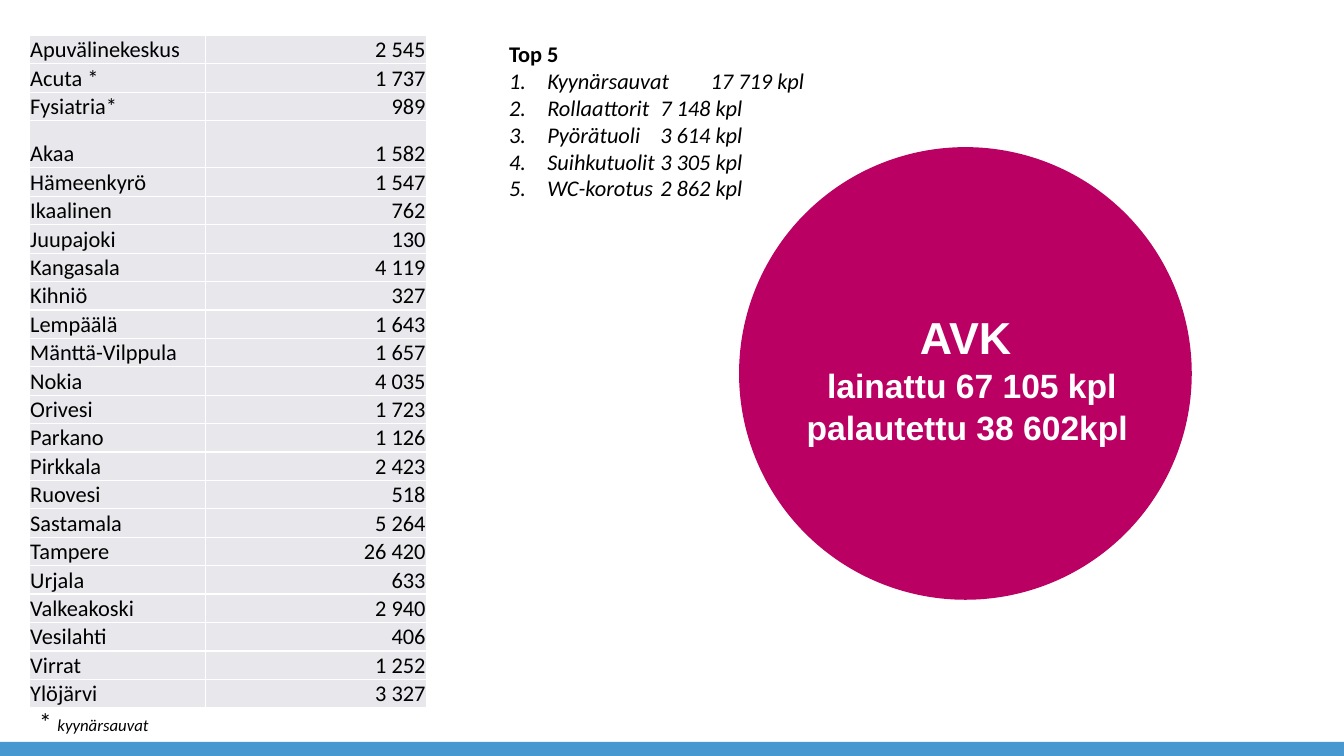
from lxml import etree
from pptx import Presentation
from pptx.dml import color
from pptx.enum import shapes, text
from pptx.oxml import ns
from pptx.util import Inches, Pt

LOANS = [
    ("Apuvälinekeskus", "2 545"), ("Acuta *", "1 737"), ("Fysiatria*", "989"),
    ("Akaa", "1 582"), ("Hämeenkyrö", "1 547"), ("Ikaalinen", "762"),
    ("Juupajoki", "130"), ("Kangasala", "4 119"), ("Kihniö", "327"),
    ("Lempäälä", "1 643"), ("Mänttä-Vilppula", "1 657"), ("Nokia", "4 035"),
    ("Orivesi", "1 723"), ("Parkano", "1 126"), ("Pirkkala", "2 423"),
    ("Ruovesi", "518"), ("Sastamala", "5 264"), ("Tampere", "26 420"),
    ("Urjala", "633"), ("Valkeakoski", "2 940"), ("Vesilahti", "406"),
    ("Virrat", "1 252"), ("Ylöjärvi", "3 327"),
]
TOP_FIVE = [
    ("Kyynärsauvat", "17 719 kpl"), ("Rollaattorit", "7 148 kpl"),
    ("Pyörätuoli", "3 614 kpl"), ("Suihkutuolit", "3 305 kpl"),
    ("WC-korotus", "2 862 kpl"),
]


def rgb(value):
    return color.RGBColor.from_string(value)


def add_run(p, words, size, name="Calibri", hue="000000", bold=False, italic=False):
    r = p.add_run()
    r.text = words
    r.font.size = Pt(size)
    r.font.name = name
    r.font.bold = bold
    r.font.italic = italic
    r.font.color.rgb = rgb(hue)


def add_shape(s, kind, box, fill):
    sp = s.shapes.add_shape(kind, *map(Inches, box))
    sp.shadow.inherit = False
    sp.fill.solid()
    sp.fill.fore_color.rgb = rgb(fill)
    sp.line.fill.background()


def add_text(s, box, anchor=text.MSO_ANCHOR.TOP):
    tf = s.shapes.add_textbox(*map(Inches, box)).text_frame
    tf.word_wrap = True
    tf.vertical_anchor = anchor
    return tf


def number_paragraph(p):
    pPr = p._p.get_or_add_pPr()
    pPr.set("marL", str(Inches(0.38)))
    pPr.set("indent", str(Inches(-0.38)))
    etree.SubElement(pPr, ns.qn("a:buFont"), typeface="+mj-lt")
    etree.SubElement(pPr, ns.qn("a:buAutoNum"), type="arabicPeriod")


def add_borders(cell, hue):
    tcPr = cell._tc.get_or_add_tcPr()
    for side in ("lnL", "lnR", "lnT", "lnB"):
        ln = etree.SubElement(tcPr, ns.qn(f"a:{side}"), w=str(Pt(1)))
        fill = etree.SubElement(ln, ns.qn("a:solidFill"))
        etree.SubElement(fill, ns.qn("a:srgbClr"), val=hue)


def fill_cell(cell, words, align):
    cell.margin_left = cell.margin_right = cell.margin_top = Inches(0.01)
    cell.margin_bottom = 0
    cell.vertical_anchor = text.MSO_ANCHOR.BOTTOM
    add_borders(cell, "FFFFFF")
    cell.fill.solid()
    cell.fill.fore_color.rgb = rgb("E8E8EC")
    p = cell.text_frame.paragraphs[0]
    p.alignment = align
    add_run(p, words, 16)


def add_loan_table(s):
    box = map(Inches, (0.29, 0.35, 3.94, 6.61))
    table = s.shapes.add_table(len(LOANS), 2, *box).table
    table.first_row = table.horz_banding = False
    for column, width in zip(table.columns, (1.75, 2.19)):
        column.width = Inches(width)
    aligns = (text.PP_ALIGN.LEFT, text.PP_ALIGN.RIGHT)
    for i, loan in enumerate(LOANS):
        table.rows[i].height = Inches(0.47 if loan[0] == "Akaa" else 0.28)
        for j, words in enumerate(loan):
            fill_cell(table.cell(i, j), words, aligns[j])


def add_totals(s):
    tf = add_text(s, (7.31, 2.3, 4.66, 2.89), text.MSO_ANCHOR.MIDDLE)
    lines = (("AVK ", 32), ("lainattu 67 105 kpl palautettu 38 602kpl ", 24))
    for i, (words, size) in enumerate(lines):
        p = tf.add_paragraph() if i else tf.paragraphs[0]
        p.alignment = text.PP_ALIGN.CENTER
        p.line_spacing = 1.04
        add_run(p, words, size, "Arial", "FFFFFF", bold=True)


def add_footnote(s):
    p = add_text(s, (0.29, 6.96, 6.77, 0.4)).paragraphs[0]
    add_run(p, "* ", 18)
    add_run(p, "kyynärsauvat", 12, italic=True)


def add_top_five(s):
    tf = add_text(s, (4.95, 0.35, 3.71, 1.72))
    add_run(tf.paragraphs[0], "Top 5", 16, bold=True)
    for device, count in TOP_FIVE:
        p = tf.add_paragraph()
        number_paragraph(p)
        add_run(p, f"{device}\t{count}", 16, italic=True)


def main():
    prs = Presentation()
    prs.slide_width = Inches(13.33)
    prs.slide_height = Inches(7.5)
    s = prs.slides.add_slide(prs.slide_layouts[6])
    add_shape(s, shapes.MSO_SHAPE.RECTANGLE, (0, 7.36, 13.33, 0.14), "4798D1")
    add_shape(s, shapes.MSO_SHAPE.OVAL, (7.33, 1.46, 4.49, 4.49), "BA0063")
    add_loan_table(s)
    add_totals(s)
    add_footnote(s)
    add_top_five(s)
    prs.save("out.pptx")


if __name__ == "__main__":
    main()
